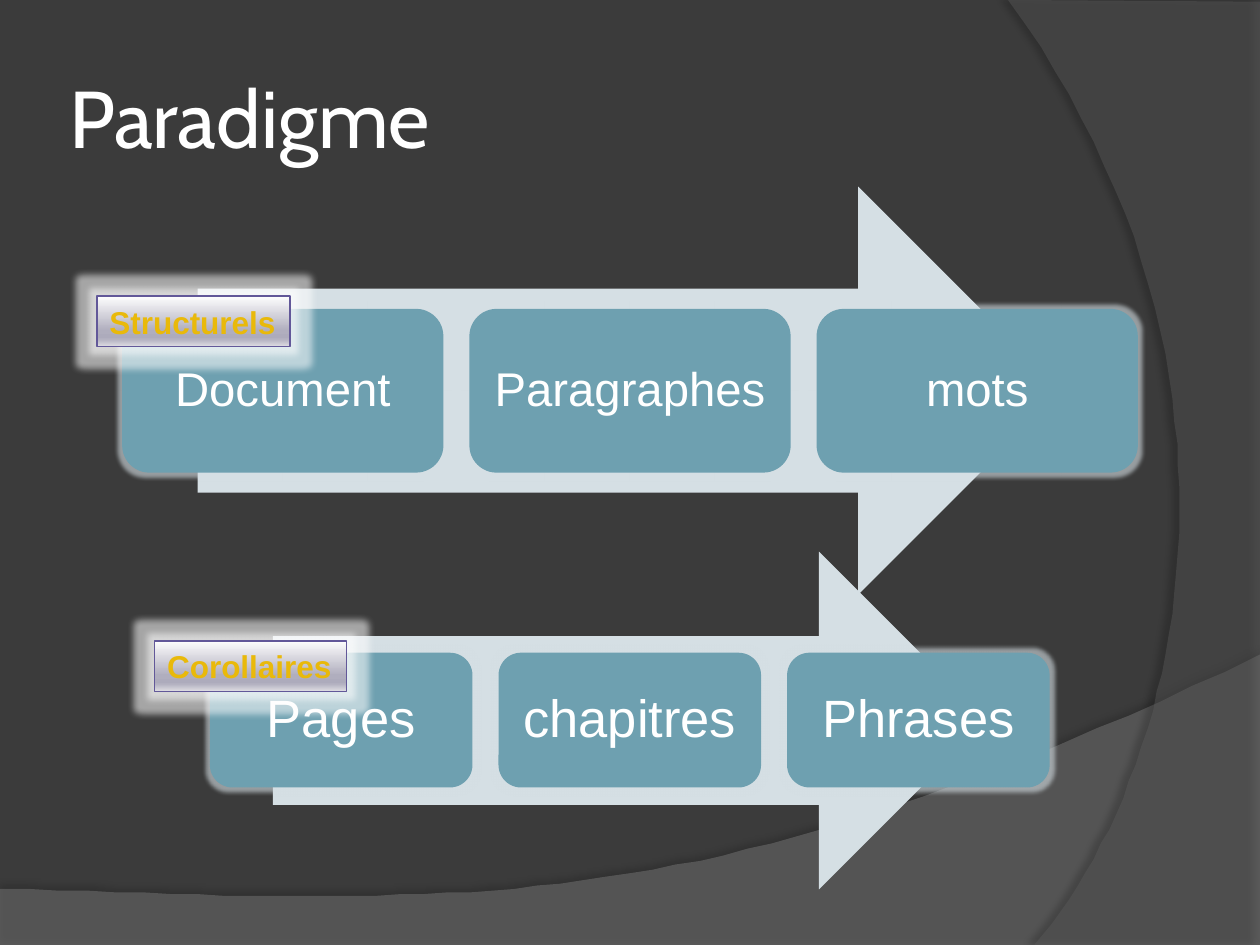
from lxml.etree import SubElement
from pptx import Presentation
from pptx.dml.color import RGBColor
from pptx.enum.shapes import MSO_SHAPE
from pptx.enum.text import MSO_ANCHOR, PP_ALIGN
from pptx.oxml.ns import qn
from pptx.util import Pt

BACKGROUND = RGBColor(0x3B, 0x3B, 0x3B)
WAVE = RGBColor(0x7F, 0x7F, 0x7F)
SIDE = RGBColor(0x5E, 0x5E, 0x5E)
WHITE = RGBColor(0xFF, 0xFF, 0xFF)
BLACK = RGBColor(0, 0, 0)
ARROW = RGBColor(0xD5, 0xDF, 0xE4)
BOX = RGBColor(0x6E, 0xA0, 0xB0)
LABEL_LINE = RGBColor(0x62, 0x58, 0x99)
LABEL_STOPS = [(0, "FEFEFE"), (68, "B0AEBE"), (81, "ADABBC"), (86, "B5B3C2"), (100, "E0DFE4")]
GOLD_STOPS = [(0, "FFDC75"), (75, "E9B90A"), (100, "9E8700")]

# Corners are joined by straight lines; the curve leaves the last corner.
SWOOSHES = [
    {"corners": [(0, 507.6), (0, 540.7), (720, 540.7), (720, 374.4)],
     "curve": [(402.5, 524.9), (281.5, 517.7), (0, 507.6)],
     "color": WAVE, "alpha": 45, "shadow": (35, 4, 3.5, 270)},
    {"corners": [(720, 1.4), (720, 540), (591.1, 540)],
     "curve": [(673.2, 445.7), (733, 216), (576, 0)],
     "color": SIDE, "alpha": 40, "shadow": (45, 4, 4, 180)},
]
TITLE = "Paradigme"
PROCESSES = [
    {"steps": ["Document", "Paragraphes", "mots"], "size": 27, "inset": 8,
     "arrow": (113, 106.6, 494, 233.2), "first": (69.8, 176.5),
     "box": (183.6, 93.6), "pitch": 198.4,
     "label": "Structurels", "label_at": (55.4, 169.2, 110.4, 29)},
    {"steps": ["Pages", "chapitres", "Phrases"], "size": 30, "inset": 8.6,
     "arrow": (156, 315.2, 408.5, 193), "first": (120, 373),
     "box": (150, 77), "pitch": 164.9,
     "label": "Corollaires", "label_at": (88.4, 366.2, 109.6, 29)},
]


def add_color(parent, color, alpha):
    srgb = SubElement(parent, qn("a:srgbClr"), val=str(color))
    SubElement(srgb, qn("a:alpha"), val=str(alpha * 1000))


def add_effect(shape, tag, color, alpha, **attributes):
    shape.shadow.inherit = False
    effects = shape._element.spPr.find(qn("a:effectLst"))
    effect = SubElement(effects, qn(tag), {k: str(int(v)) for k, v in attributes.items()})
    add_color(effect, color, alpha)


def paint_gradient(fill, owner, stops):
    """Fill owner from top to bottom with (percent, hex colour) stops."""
    fill.gradient()
    fill.gradient_angle = 270
    stop_list = owner.find(qn("a:gradFill")).find(qn("a:gsLst"))
    for old in list(stop_list):
        stop_list.remove(old)
    for percent, color in stops:
        stop = SubElement(stop_list, qn("a:gs"), pos=str(percent * 1000))
        SubElement(stop, qn("a:srgbClr"), val=color)


def bezier(start, c1, c2, end, steps=48):
    for i in range(1, steps + 1):
        t = i / steps
        u = 1 - t
        yield tuple(u**3 * a + 3 * u * u * t * b + 3 * u * t * t * c + t**3 * d
                    for a, b, c, d in zip(start, c1, c2, end))


def add_swoosh(slide, swoosh):
    corners = swoosh["corners"]
    outline = corners[1:] + list(bezier(corners[-1], *swoosh["curve"]))
    builder = slide.shapes.build_freeform(*corners[0], scale=Pt(1))
    builder.add_line_segments(outline, close=True)
    shape = builder.convert_to_shape()
    shape.fill.solid()
    shape.fill.fore_color.rgb = swoosh["color"]
    srgb = shape._element.spPr.find(qn("a:solidFill"))[0]
    SubElement(srgb, qn("a:alpha"), val=str(swoosh["alpha"] * 1000))
    shape.line.fill.background()
    alpha, blur, distance, angle = swoosh["shadow"]
    add_effect(shape, "a:outerShdw", BLACK, alpha,
               blurRad=Pt(blur), dist=Pt(distance), dir=angle * 60000)


def add_preset(slide, preset, place, color):
    shape = slide.shapes.add_shape(preset, *map(Pt, place))
    shape.shadow.inherit = False
    shape.fill.solid()
    shape.fill.fore_color.rgb = color
    shape.line.fill.background()
    return shape


def write(shape, text, size, font, inset, align=PP_ALIGN.LEFT):
    frame = shape.text_frame
    frame.text = text
    frame.vertical_anchor = MSO_ANCHOR.MIDDLE
    frame.margin_left = frame.margin_right = Pt(inset)
    frame.margin_top = frame.margin_bottom = Pt(3.6)
    frame.word_wrap = True
    paragraph = frame.paragraphs[0]
    paragraph.alignment = align
    run = paragraph.runs[0]
    run.font.size = Pt(size)
    run.font.name = font
    run.font.color.rgb = WHITE
    return run


def add_process(slide, process):
    add_preset(slide, MSO_SHAPE.RIGHT_ARROW, process["arrow"], ARROW)
    left, top = process["first"]
    for i, step in enumerate(process["steps"]):
        place = (left + i * process["pitch"], top, *process["box"])
        box = add_preset(slide, MSO_SHAPE.ROUNDED_RECTANGLE, place, BOX)
        add_effect(box, "a:glow", ARROW, 60, rad=Pt(5))
        write(box, step, process["size"], "Arial", process["inset"], PP_ALIGN.CENTER)
        box.text_frame.paragraphs[0].line_spacing = 0.9


def add_label(slide, process):
    label = add_preset(slide, MSO_SHAPE.RECTANGLE, process["label_at"], WHITE)
    paint_gradient(label.fill, label._element.spPr, LABEL_STOPS)
    label.line.color.rgb = LABEL_LINE
    label.line.width = Pt(0.75)
    add_effect(label, "a:glow", WHITE, 55, rad=Pt(8))
    run = write(label, process["label"], 18, "Arial", 7.2)
    label.text_frame.word_wrap = False
    run.font.bold = True
    paint_gradient(run.font.fill, run._r.rPr, GOLD_STOPS)


def main():
    deck = Presentation()
    deck.slide_width, deck.slide_height = Pt(720), Pt(540)
    slide = deck.slides.add_slide(deck.slide_layouts[6])
    slide.background.fill.solid()
    slide.background.fill.fore_color.rgb = BACKGROUND

    for swoosh in SWOOSHES:
        add_swoosh(slide, swoosh)
    title = slide.shapes.add_textbox(Pt(36), Pt(21.6), Pt(588.2), Pt(90))
    write(title, TITLE, 46, "Cabin", 3.6)
    for process in PROCESSES:
        add_process(slide, process)
    for process in PROCESSES:
        add_label(slide, process)
    deck.save("out.pptx")


if __name__ == "__main__":
    main()
